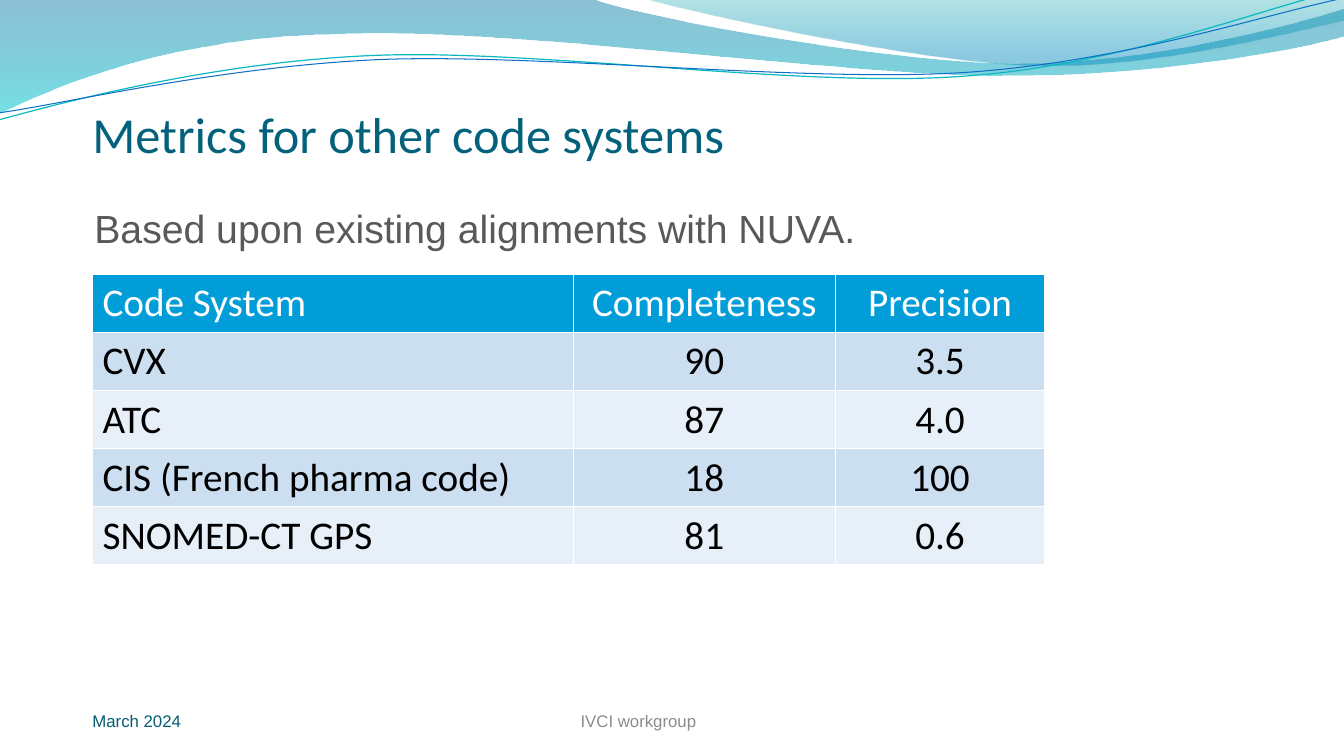
import math
from dataclasses import dataclass

from lxml import etree
from pptx import Presentation
from pptx import util as u
from pptx.dml.color import RGBColor
from pptx.enum import text
from pptx.oxml import ns
from pptx.shapes.autoshape import Shape
from pptx.slide import Slide
from pptx.table import _Cell as Cell

COLORS = {
    "title": "04617B",
    "body": "595959",
    "footer": "8C8C8C",
    "date": "045D75",
    "white": "FFFFFF",
    "black": "000000",
    "header": "009DD9",
    "odd_row": "CCDFF1",
    "even_row": "E7EFF8",
    "wave_blue": "0074A1",
    "wave_cyan": "00C6CF",
    "wave_teal": "00A1A9",
    "wave_sky": "008BBF",
    "line_teal": "0AB8BF",
    "line_blue": "0F6FC6",
}
RIPPLE_TILT = 2.7

Point = tuple[float, float]
# A segment holds one end point, or two control points and an end point (cm).
Segment = tuple[float, ...]


@dataclass(frozen=True)
class GradientColor:
    position: float
    color: str
    opacity: int


@dataclass(frozen=True)
class Wave:
    start: Point
    segments: list[Segment]
    gradient: tuple[GradientColor, GradientColor]


@dataclass(frozen=True)
class Ripple:
    start: Point
    segments: list[Segment]
    center: Point
    color: str
    width: float


@dataclass(frozen=True)
class Label:
    words: str
    box: tuple[float, float, float, float]
    size: int
    font: str
    color: str
    anchor: text.MSO_ANCHOR = text.MSO_ANCHOR.TOP
    align: text.PP_ALIGN = text.PP_ALIGN.LEFT
    insets: tuple[float, float, float, float] = (0.25, 0.13, 0.25, 0.13)


WAVES = [
    Wave((0, 0), [
        (14.91, -0.03),
        (16.1, 0.43, 22.48, 1.6, 25.68, 1.6),
        (28.91, 1.6, 32.46, 0.66, 33.86, 0.23),
        (33.91, 0.91),
        (33.3, 1.12, 29.46, 1.93, 25.25, 1.91),
        (21.06, 1.91, 12.93, 0.71, 8.71, 0.86),
        (4.37, 0.91, 1.55, 2.11, -0.03, 2.87),
        (0, 0),
    ], (GradientColor(0, "wave_blue", 45), GradientColor(1, "wave_cyan", 55))),
    Wave((16.23, -0.03), [
        (17.25, 0.28, 23.09, 1.57, 26.04, 1.65),
        (28.98, 1.75, 32.56, 0.81, 33.86, 0.53),
        (33.86, 0),
        (16.23, -0.03),
    ], (GradientColor(0, "wave_teal", 30), GradientColor(0.8, "wave_sky", 45))),
]
RIPPLES = [
    Ripple((-0.03, 3.02), [
        (1.63, 2.57, 5.36, 1.57, 9.37, 1.4),
        (13.39, 1.22, 20.07, 2.21, 24.13, 1.93),
        (28.19, 1.68, 31.8, 0.2, 33.81, -0.25),
    ], (16.89, 1.46), "line_teal", 0.85),
    Ripple((0, 2.84), [
        (1.6, 2.62, 5.54, 1.68, 9.6, 1.5),
        (13.64, 1.35, 20.22, 2.08, 24.26, 1.83),
        (28.32, 1.57, 31.88, 0.36, 33.88, -0.05),
    ], (16.94, 1.5), "line_blue", 0.75),
]
LABELS = [
    Label("Metrics for other code systems", (2.33, 1.96, 29.84, 2.16), 36, "Calibri",
          "title", text.MSO_ANCHOR.BOTTOM, insets=(0, 0.13, 0, 0)),
    Label("Based upon existing alignments with NUVA.", (2.13, 5.03, 19.91, 1.45), 28,
          "Arial", "body"),
    Label("IVCI workgroup", (9.88, 17.65, 12.42, 1.02), 12, "Arial", "footer",
          text.MSO_ANCHOR.MIDDLE, text.PP_ALIGN.CENTER),
    Label("March 2024", (2.33, 17.65, 7.62, 1.02), 12, "Arial", "date",
          text.MSO_ANCHOR.MIDDLE, insets=(0, 0, 0, 0)),
]
METRICS = [
    ("Code System", "Completeness", "Precision"),
    ("CVX", "90", "3.5"),
    ("ATC", "87", "4.0"),
    ("CIS (French pharma code)", "18", "100"),
    ("SNOMED-CT GPS", "81", "0.6"),
]
COLUMN_WIDTHS = (12.12, 6.6, 5.28)
ROW_HEIGHT = 1.04
TABLE_HEIGHT = 7.19


def rgb(name: str) -> RGBColor:
    return RGBColor.from_string(COLORS[name])


def turn(point: Point, center: Point, degrees: float) -> Point:
    dx, dy = point[0] - center[0], point[1] - center[1]
    c, s = math.cos(math.radians(degrees)), math.sin(math.radians(degrees))
    return center[0] + c * dx - s * dy, center[1] + s * dx + c * dy


def draw_outline(slide: Slide, item: Wave | Ripple, tilt: float = 0) -> Shape:
    """Draw straight and cubic segments, laid out level and then tilted."""
    points = [item.start]
    for segment in item.segments:
        points += zip(segment[::2], segment[1::2])
    if tilt:
        points = [turn(point, item.center, tilt) for point in points]
    start, *others = [(u.Cm(x), u.Cm(y)) for x, y in points]
    builder = slide.shapes.build_freeform(*start)
    builder.add_line_segments(others, close=isinstance(item, Wave))
    shape = builder.convert_to_shape()
    shape.rotation = -tilt
    shape.shadow.inherit = False
    # Join each pair of control points and its end point into one curve
    lines = iter(list(shape._element.iter(ns.qn("a:lnTo"))))
    for segment in item.segments:
        line = next(lines)
        if len(segment) == 6:
            line.addprevious(curve := etree.Element(ns.qn("a:cubicBezTo")))
            for part in (line, next(lines), next(lines)):
                curve.append(part[0])
                part.getparent().remove(part)
    return shape


def draw_wave(slide: Slide, wave: Wave) -> None:
    shape = draw_outline(slide, wave)
    shape.line.fill.background()
    shape.fill.gradient()
    shape.fill.gradient_angle = 270
    for stop, wanted in zip(shape.fill.gradient_stops, wave.gradient):
        stop.position = wanted.position
        stop.color.rgb = rgb(wanted.color)
    for color, wanted in zip(shape.fill._xPr.iter(ns.qn("a:srgbClr")), wave.gradient):
        etree.SubElement(color, ns.qn("a:alpha"), val=str(wanted.opacity * 1000))


def draw_ripple(slide: Slide, ripple: Ripple) -> None:
    shape = draw_outline(slide, ripple, RIPPLE_TILT)
    shape.fill.background()
    shape.line.color.rgb = rgb(ripple.color)
    shape.line.width = u.Pt(ripple.width)


def add_run(paragraph, words: str, size: int, font: str, color: str) -> None:
    run = paragraph.add_run()
    run.text = words
    run.font.size = u.Pt(size)
    run.font.name = font
    run.font.bold = False
    run.font.color.rgb = rgb(color)


def draw_label(slide: Slide, label: Label) -> None:
    frame = slide.shapes.add_textbox(*map(u.Cm, label.box)).text_frame
    frame.word_wrap = True
    frame.vertical_anchor = label.anchor
    (frame.margin_left, frame.margin_top,
     frame.margin_right, frame.margin_bottom) = map(u.Cm, label.insets)
    paragraph = frame.paragraphs[0]
    paragraph.alignment = label.align
    add_run(paragraph, label.words, label.size, label.font, label.color)


def set_borders(cell: Cell) -> None:
    properties = cell._tc.get_or_add_tcPr()
    for index, side in enumerate(("lnL", "lnR", "lnT", "lnB")):
        line = etree.Element(ns.qn(f"a:{side}"), w=str(u.Pt(1)))
        fill = etree.SubElement(line, ns.qn("a:solidFill"))
        etree.SubElement(fill, ns.qn("a:srgbClr"), val=COLORS["white"])
        properties.insert(index, line)


def draw_table(slide: Slide) -> None:
    frame = slide.shapes.add_table(
        len(METRICS), len(COLUMN_WIDTHS), u.Cm(2.33), u.Cm(6.92),
        u.Cm(sum(COLUMN_WIDTHS)), u.Cm(TABLE_HEIGHT))
    table = frame.table
    for column, width in zip(table.columns, COLUMN_WIDTHS):
        column.width = u.Cm(width)
    for i, values in enumerate(METRICS):
        table.rows[i].height = u.Cm(ROW_HEIGHT)
        fill = "header" if i == 0 else "odd_row" if i % 2 else "even_row"
        for j, value in enumerate(values):
            cell = table.cell(i, j)
            cell.fill.solid()
            cell.fill.fore_color.rgb = rgb(fill)
            set_borders(cell)
            paragraph = cell.text_frame.paragraphs[0]
            paragraph.alignment = text.PP_ALIGN.CENTER if j else text.PP_ALIGN.LEFT
            add_run(paragraph, value, 28, "Calibri", "black" if i else "white")
    frame.height = u.Cm(TABLE_HEIGHT)


def main() -> None:
    presentation = Presentation()
    presentation.slide_width, presentation.slide_height = u.Cm(33.87), u.Cm(19.05)
    slide = presentation.slides.add_slide(presentation.slide_layouts[6])
    # Wave header
    for wave in WAVES:
        draw_wave(slide, wave)
    for ripple in RIPPLES:
        draw_ripple(slide, ripple)
    # Metrics and texts
    draw_table(slide)
    for label in LABELS:
        draw_label(slide, label)
    presentation.save("out.pptx")


if __name__ == "__main__":
    main()
